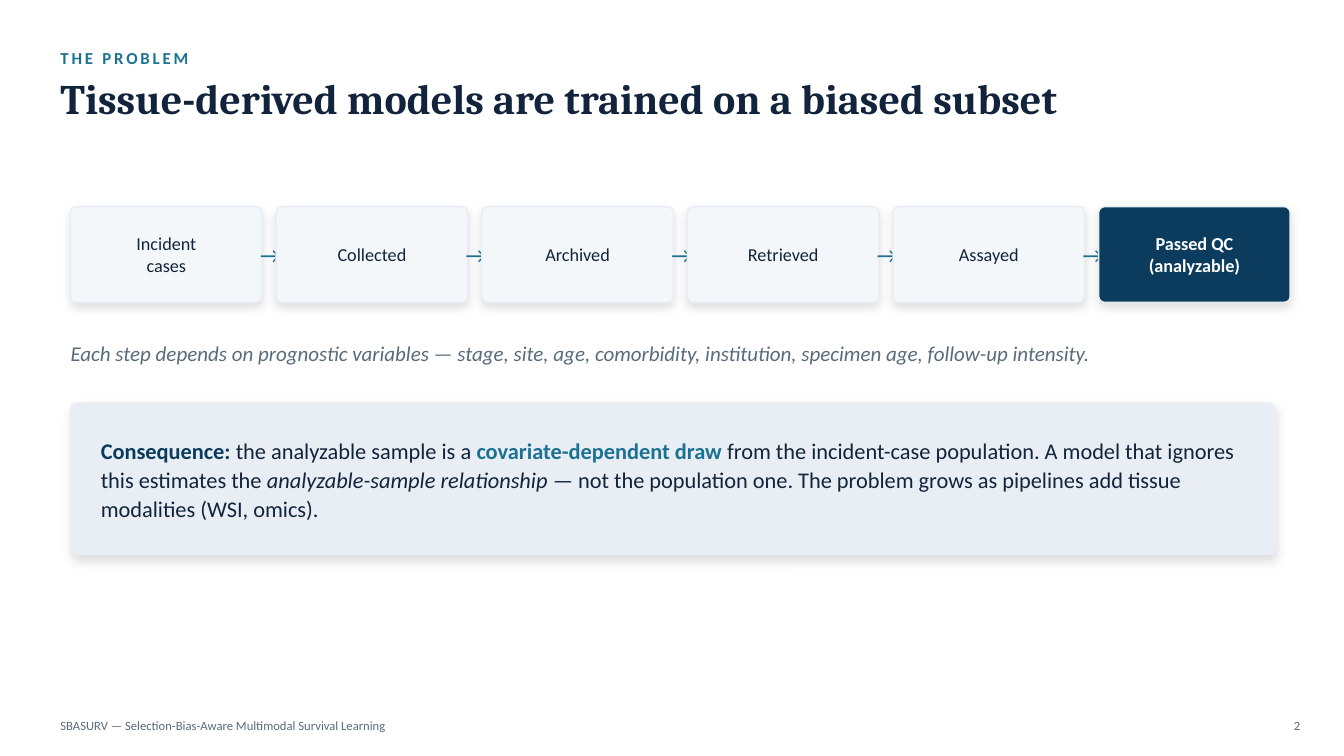
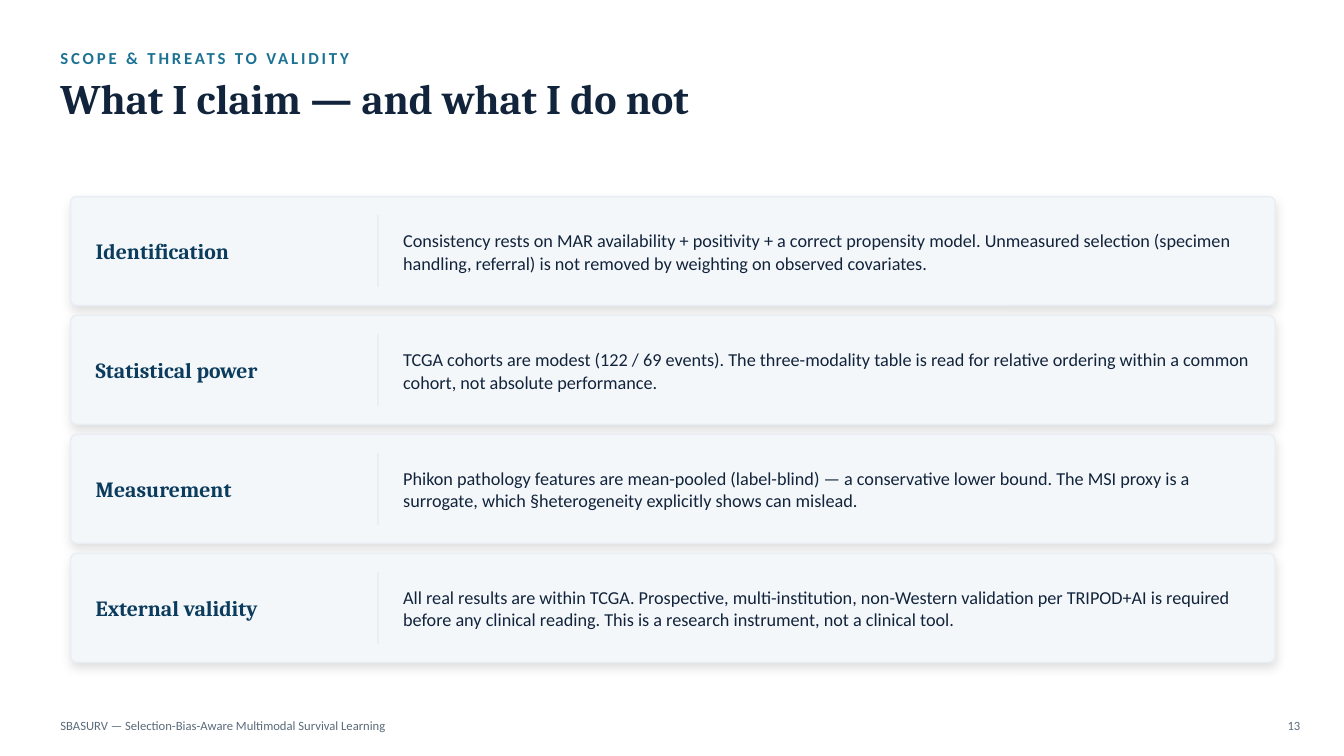
from dataclasses import dataclass, replace

from lxml.etree import SubElement
from pptx import Presentation
from pptx.dml.color import RGBColor
from pptx.enum.shapes import MSO_CONNECTOR, MSO_SHAPE
from pptx.enum.text import MSO_ANCHOR, PP_ALIGN
from pptx.oxml.ns import qn
from pptx.util import Pt

COLORS = {
    "ink": "12243B",
    "navy": "0B3C5D",
    "teal": "1C7293",
    "grey": "5A6B7B",
    "card": "F4F7FA",
    "mist": "E8EEF4",
    "white": "FFFFFF",
    "shadow": "000000",
}
SLIDE_W, SLIDE_H = 960, 540
MARGIN, CONTENT_X, CONTENT_W = 43.2, 50.4, 860.4
CARD_RADIUS = 4.32
FOOTER = "SBASURV — Selection-Bias-Aware Multimodal Survival Learning"


@dataclass(frozen=True)
class Box:
    x: float
    y: float
    w: float
    h: float


@dataclass(frozen=True)
class Style:
    size: float
    color: str = "ink"
    font: str = "Calibri"
    bold: bool = False
    italic: bool = False
    tracking: float = 0


@dataclass(frozen=True)
class Step:
    label: str
    fill: str = "card"
    text: str = "ink"
    bold: bool = False


@dataclass(frozen=True)
class Threat:
    name: str
    claim: str


KICKER = Style(12, "teal", bold=True, tracking=2)
TITLE = Style(30, font="Cambria", bold=True)
FOOT = Style(9, "grey")
BODY = Style(13)
ARROW = Style(16, "teal")
REMARK = Style(15, "grey", italic=True)
ROW_NAME = Style(15.5, "navy", "Cambria", bold=True)
LEAD = Style(16)

STEPS = [
    Step("Incident\ncases"),
    Step("Collected"),
    Step("Archived"),
    Step("Retrieved"),
    Step("Assayed"),
    Step("Passed QC\n(analyzable)", "navy", "white", True),
]

CONSEQUENCE = [
    ("Consequence: ", replace(LEAD, color="navy", bold=True)),
    ("the analyzable sample is a ", LEAD),
    ("covariate-dependent draw", replace(LEAD, color="teal", bold=True)),
    (" from the incident-case population. A model that ignores this estimates the ", LEAD),
    ("analyzable-sample relationship", replace(LEAD, italic=True)),
    (" — not the population one. The problem grows as pipelines add tissue "
     "modalities (WSI, omics).", LEAD),
]

THREATS = [
    Threat("Identification",
           "Consistency rests on MAR availability + positivity + a correct propensity model. "
           "Unmeasured selection (specimen handling, referral) is not removed by weighting "
           "on observed covariates."),
    Threat("Statistical power",
           "TCGA cohorts are modest (122 / 69 events). The three-modality table is read for "
           "relative ordering within a common cohort, not absolute performance."),
    Threat("Measurement",
           "Phikon pathology features are mean-pooled (label-blind) — a conservative lower "
           "bound. The MSI proxy is a surrogate, which §heterogeneity explicitly shows can "
           "mislead."),
    Threat("External validity",
           "All real results are within TCGA. Prospective, multi-institution, non-Western "
           "validation per TRIPOD+AI is required before any clinical reading. This is a "
           "research instrument, not a clinical tool."),
]


def rgb(name: str) -> RGBColor:
    return RGBColor.from_string(COLORS[name])


def place(box: Box) -> tuple:
    return Pt(box.x), Pt(box.y), Pt(box.w), Pt(box.h)


# Text helpers
def format_run(r, style: Style) -> None:
    r.font.name = style.font
    r.font.size = Pt(style.size)
    r.font.bold = style.bold
    r.font.italic = style.italic
    r.font.color.rgb = rgb(style.color)
    if style.tracking:
        r.font._element.set("spc", str(round(style.tracking * 100)))


def set_frame(tf, anchor=MSO_ANCHOR.MIDDLE, left: float = 0, right: float = 0) -> None:
    tf.word_wrap = True
    tf.vertical_anchor = anchor
    tf.margin_left, tf.margin_right = Pt(left), Pt(right)
    tf.margin_top = tf.margin_bottom = 0


def write(tf, text: str, style: Style, align=PP_ALIGN.LEFT, spacing: float = 1) -> None:
    tf.text = text
    for p in tf.paragraphs:
        p.alignment = align
        p.line_spacing = spacing
        for r in p.runs:
            format_run(r, style)


def add_text(slide, box: Box, text: str, style: Style, align=PP_ALIGN.LEFT,
             anchor=MSO_ANCHOR.MIDDLE, spacing: float = 1) -> None:
    tf = slide.shapes.add_textbox(*place(box)).text_frame
    set_frame(tf, anchor)
    write(tf, text, style, align, spacing)


# Shape helpers
def add_card(slide, box: Box, fill: str = "card"):
    sp = slide.shapes.add_shape(MSO_SHAPE.ROUNDED_RECTANGLE, *place(box))
    sp.adjustments[0] = CARD_RADIUS / box.h
    sp.fill.solid()
    sp.fill.fore_color.rgb = rgb(fill)
    sp.line.color.rgb = rgb("mist")
    sp.line.width = Pt(1)
    sp.shadow.inherit = False
    effects = sp.element.spPr.find(qn("a:effectLst"))
    shadow = SubElement(effects, qn("a:outerShdw"), blurRad=str(Pt(7)), dist=str(Pt(3)),
                        dir="5400000", algn="bl", rotWithShape="0")
    color = SubElement(shadow, qn("a:srgbClr"), val=COLORS["shadow"])
    SubElement(color, qn("a:alpha"), val="12000")
    return sp


def add_divider(slide, x: float, top: float, bottom: float) -> None:
    line = slide.shapes.add_connector(MSO_CONNECTOR.STRAIGHT, Pt(x), Pt(top), Pt(x), Pt(bottom))
    line.line.color.rgb = rgb("mist")
    line.line.width = Pt(1.5)
    SubElement(line.element.spPr, qn("a:effectLst"))


# Shared slide frame
def new_slide(prs, kicker: str, title: str, number: int):
    slide = prs.slides.add_slide(prs.slide_layouts[6])
    add_text(slide, Box(MARGIN, 30.24, 576, 21.6), kicker, KICKER)
    add_text(slide, Box(MARGIN, 51.84, 871.2, 64.8), title, TITLE, anchor=MSO_ANCHOR.TOP)
    add_text(slide, Box(MARGIN, 507.6, 648, 21.6), FOOTER, FOOT)
    add_text(slide, Box(892.8, 507.6, 36, 21.6), str(number), FOOT, PP_ALIGN.RIGHT)
    return slide


def problem_slide(prs) -> None:
    slide = new_slide(prs, "THE PROBLEM",
                      "Tissue-derived models are trained on a biased subset", 2)

    # Selection pipeline; each card overlaps the tip of the arrow before it
    top, width, height, pitch = 147.6, 136.8, 68.4, 146.88
    for i, step in enumerate(STEPS):
        x = CONTENT_X + i * pitch
        if i:
            add_text(slide, Box(x - 11.52, top, 14.4, height), "→", ARROW, PP_ALIGN.CENTER)
        tf = add_card(slide, Box(x, top, width, height), step.fill).text_frame
        set_frame(tf)
        write(tf, step.label, replace(BODY, color=step.text, bold=step.bold), PP_ALIGN.CENTER)

    add_text(slide, Box(CONTENT_X, 234, 864, 36),
             "Each step depends on prognostic variables — stage, site, age, comorbidity, "
             "institution, specimen age, follow-up intensity.", REMARK)

    # Consequence panel
    tf = add_card(slide, Box(CONTENT_X, 288, CONTENT_W, 108), "mist").text_frame
    set_frame(tf, left=20.33, right=16.73)
    p = tf.paragraphs[0]
    p.alignment = PP_ALIGN.LEFT
    p.line_spacing = 1.08
    for text, style in CONSEQUENCE:
        r = p.add_run()
        r.text = text
        format_run(r, style)


def scope_slide(prs) -> None:
    slide = new_slide(prs, "SCOPE & THREATS TO VALIDITY",
                      "What I claim — and what I do not", 13)

    # One card per threat
    top, height, gap, inset = 140.4, 77.76, 7.2, 12.96
    for i, threat in enumerate(THREATS):
        y = top + i * (height + gap)
        add_card(slide, Box(CONTENT_X, y, CONTENT_W, height))
        add_text(slide, Box(68.4, y, 194.4, height), threat.name, ROW_NAME)
        add_divider(slide, 270, y + inset, y + height - inset)
        add_text(slide, Box(288, y, 608.4, height), threat.claim, BODY, spacing=1.04)


def main() -> None:
    prs = Presentation()
    prs.slide_width, prs.slide_height = Pt(SLIDE_W), Pt(SLIDE_H)
    problem_slide(prs)
    scope_slide(prs)
    prs.save("out.pptx")


if __name__ == "__main__":
    main()
